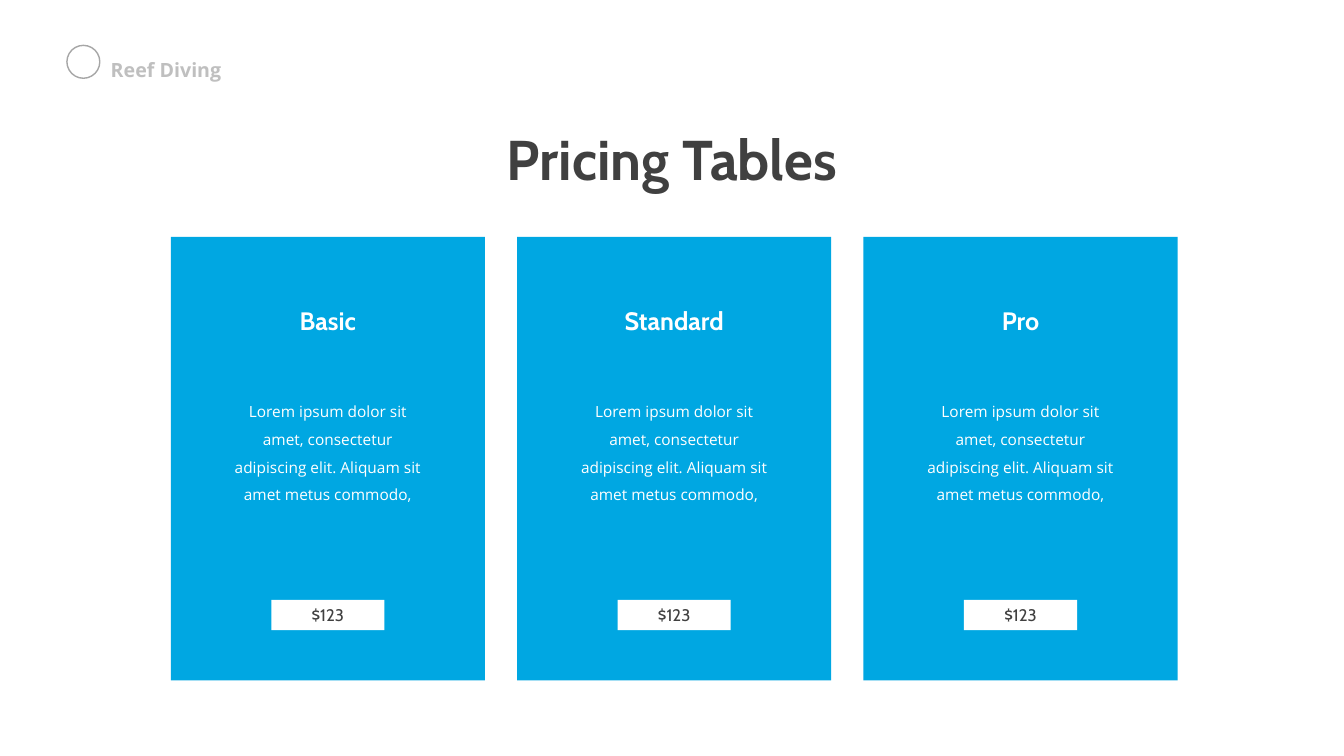
"""Build a pricing slide with three plan cards."""
from pptx import Presentation
from pptx.dml.color import RGBColor
from pptx.enum.shapes import MSO_SHAPE
from pptx.enum.text import MSO_ANCHOR, PP_ALIGN
from pptx.util import Pt

RECT, OVAL = MSO_SHAPE.RECTANGLE, MSO_SHAPE.OVAL
LEFT, CENTER = PP_ALIGN.LEFT, PP_ALIGN.CENTER
TOP, MIDDLE = MSO_ANCHOR.TOP, MSO_ANCHOR.MIDDLE
BLUE = RGBColor(0x00, 0xA7, 0xE2)
WHITE = RGBColor(0xFF, 0xFF, 0xFF)
DARK = RGBColor(0x40, 0x40, 0x40)
GREY = RGBColor(0xA6, 0xA6, 0xA6)
LIGHT = RGBColor(0xBF, 0xBF, 0xBF)

PLANS = [("Basic", "$123"), ("Standard", "$123"), ("Pro", "$123")]
BODY = ("Lorem ipsum dolor sit amet, consectetur adipiscing elit. "
        "Aliquam sit amet metus commodo,")
CARD_LEFT, CARD_WIDTH, CARD_STEP = 122, 224.4, 247.4

prs = Presentation()
prs.slide_width, prs.slide_height = Pt(960), Pt(540)
s = prs.slides.add_slide(prs.slide_layouts[6])


def add_block(kind, x, y, w, h, fill):
    sp = s.shapes.add_shape(kind, Pt(x), Pt(y), Pt(w), Pt(h))
    sp.shadow.inherit = False
    sp.fill.solid()
    sp.fill.fore_color.rgb = fill
    sp.line.fill.background()
    return sp


def write(sp, text, size, font, color, bold=False, align=CENTER, spacing=1.0, anchor=TOP):
    tf = sp.text_frame
    tf.word_wrap = True
    tf.vertical_anchor = anchor
    p = tf.paragraphs[0]
    p.alignment = align
    p.line_spacing = spacing
    r = p.add_run()
    r.text = text
    r.font.size = Pt(size)
    r.font.name = font
    r.font.bold = bold
    r.font.color.rgb = color


icon = add_block(OVAL, 47.8, 32.4, 23.5, 23.5, WHITE)
icon.line.color.rgb = GREY
icon.line.width = Pt(1)
brand = s.shapes.add_textbox(Pt(72), Pt(36), Pt(135.4), Pt(25.2))
write(brand, "Reef Diving", 14, "Open Sans", LIGHT, True, LEFT, 1.1)

title = s.shapes.add_textbox(Pt(259.2), Pt(85.7), Pt(441.4), Pt(55.4))
write(title, "Pricing Tables", 40, "Cabin", DARK, True)

for i, (plan, price) in enumerate(PLANS):
    x = CARD_LEFT + i * CARD_STEP
    mid = x + CARD_WIDTH / 2
    add_block(RECT, x, 169.2, CARD_WIDTH, 316.8, BLUE)
    button = add_block(RECT, mid - 40.4, 428.6, 80.8, 21.6, WHITE)
    write(button, price, 12, "Cabin", DARK, anchor=MIDDLE)
    heading = s.shapes.add_textbox(Pt(mid - 63.4), Pt(214.6), Pt(126.8), Pt(28.8))
    write(heading, plan, 18, "Cabin", WHITE, True)
    body = s.shapes.add_textbox(Pt(mid - 78.1), Pt(277.2), Pt(156.2), Pt(87.2))
    write(body, BODY, 11, "Open Sans", WHITE, spacing=1.5)

prs.save("out.pptx")
